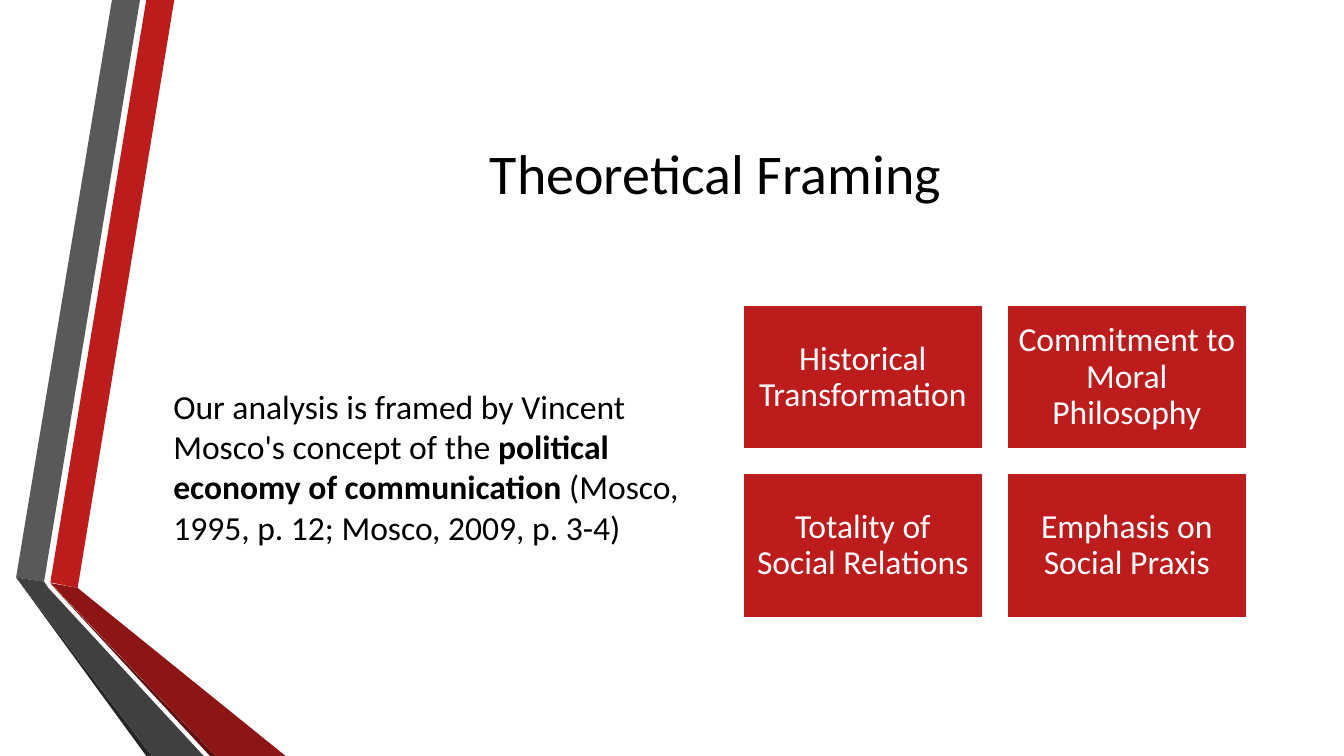
from itertools import product

from pptx import Presentation
from pptx.dml.color import RGBColor
from pptx.enum.shapes import MSO_SHAPE as SHAPE
from pptx.enum.text import MSO_ANCHOR as ANCHOR, MSO_AUTO_SIZE as AUTO_SIZE, PP_ALIGN as ALIGN
from pptx.util import Pt

BLACK = RGBColor(0x00, 0x00, 0x00)
WHITE = RGBColor(0xFF, 0xFF, 0xFF)
RED = RGBColor(0xBC, 0x1C, 0x1C)
RED_DARK = RGBColor(0x8D, 0x15, 0x15)
RED_EDGE = RGBColor(0x5E, 0x0E, 0x0E)
GRAY = RGBColor(0x59, 0x59, 0x59)
GRAY_DARK = RGBColor(0x40, 0x40, 0x40)
GRAY_EDGE = RGBColor(0x26, 0x26, 0x26)

# Folded ribbon: colour and corner points
RIBBON = [
    (RED, [(36, 416), (55.5, 420), (124.5, 0), (104.5, 0)]),
    (GRAY, [(100, 0), (80, 0), (11.5, 412.5), (31.5, 415.5)]),
    (GRAY_EDGE, [(11.5, 412.5), (104.5, 540), (108.5, 540)]),
    (RED_EDGE, [(36, 417), (150, 540), (154, 540)]),
    (RED_DARK, [(36, 416.5), (154, 540), (204, 540), (55.5, 420)]),
    (GRAY_DARK, [(145.5, 540), (34.5, 420), (31.5, 415.5), (11.5, 412.5), (108.5, 540)]),
]

# Text with its bold flag
FRAMING = [
    ("Our analysis is framed by Vincent Mosco's concept of the ", False),
    ("political economy of communication", True),
    (" (Mosco, 1995, p. 12; Mosco, 2009, p. 3-4)", False),
]

THEMES = [
    "Historical Transformation",
    "Commitment to Moral Philosophy",
    "Totality of Social Relations",
    "Emphasis on Social Praxis",
]


def add_run(p, text, size=24, color=BLACK, bold=False):
    r = p.add_run()
    r.text = text
    r.font.name = "Calibri"
    r.font.size = Pt(size)
    r.font.bold = bold
    r.font.color.rgb = color


def format_frame(tf, align, before=0, after=0, spacing=1.0):
    tf.word_wrap = True
    tf.auto_size = AUTO_SIZE.NONE
    tf.vertical_anchor = ANCHOR.MIDDLE
    p = tf.paragraphs[0]
    p.alignment = align
    p.space_before, p.space_after = Pt(before), Pt(after)
    p.line_spacing = spacing
    return p


def place(sp, left, top, width, height):
    sp.left, sp.top, sp.width, sp.height = Pt(left), Pt(top), Pt(width), Pt(height)


def add_band(s, color, points):
    corners = [(Pt(x), Pt(y)) for x, y in points]
    builder = s.shapes.build_freeform(*corners[0], scale=1.0)
    builder.add_line_segments(corners[1:], close=True)
    sp = builder.convert_to_shape()
    sp.shadow.inherit = False
    sp.fill.solid()
    sp.fill.fore_color.rgb = color
    sp.line.fill.background()


def add_title(s, text):
    sp = s.shapes.title
    place(sp, 116.6, 54, 789, 138)
    add_run(format_frame(sp.text_frame, ALIGN.CENTER), text, size=40)


def add_body(s, parts):
    sp = s.placeholders[1]
    place(sp, 116.6, 210, 380, 246)
    p = format_frame(sp.text_frame, ALIGN.LEFT, before=4.8, after=6)
    # No bullet and no hanging indent
    pPr = p._p.get_or_add_pPr()
    pPr.set("marL", "0")
    pPr.set("indent", "0")
    pPr.append(pPr.makeelement(
        "{http://schemas.openxmlformats.org/drawingml/2006/main}buNone", {}))
    for text, bold in parts:
        add_run(p, text, bold=bold)


def add_theme_box(s, text, left, top, width, height):
    sp = s.shapes.add_shape(SHAPE.RECTANGLE, Pt(left), Pt(top), Pt(width), Pt(height))
    sp.shadow.inherit = False
    sp.fill.solid()
    sp.fill.fore_color.rgb = RED
    sp.line.color.rgb = WHITE
    sp.line.width = Pt(1.25)
    tf = sp.text_frame
    tf.margin_left = tf.margin_right = tf.margin_top = tf.margin_bottom = Pt(7)
    p = format_frame(tf, ALIGN.CENTER, after=8.4, spacing=0.9)
    add_run(p, text, color=WHITE)


def main():
    prs = Presentation()
    prs.slide_width, prs.slide_height = Pt(960), Pt(540)
    s = prs.slides.add_slide(prs.slide_layouts[1])

    # Ribbon on the left edge
    for color, points in RIBBON:
        add_band(s, color, points)

    # Title and statement
    add_title(s, "Theoretical Framing")
    add_body(s, FRAMING)

    # Two by two grid of themes
    width, height, gap = 171.2, 102.8, 17.4
    for text, (row, col) in zip(THEMES, product(range(2), repeat=2)):
        add_theme_box(s, text, 530.7 + col * (width + gap),
                      218.1 + row * (height + gap), width, height)

    prs.save("out.pptx")


if __name__ == "__main__":
    main()
